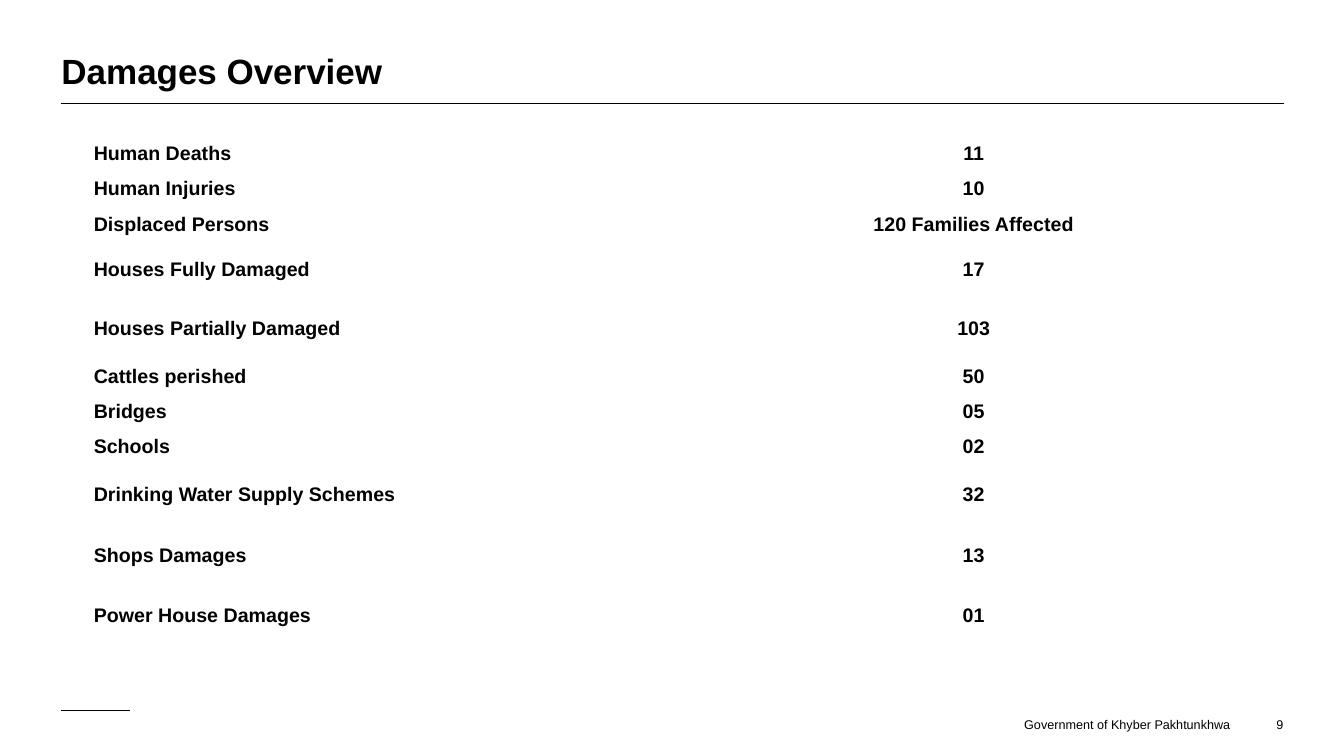
from dataclasses import dataclass

import pptx
import pptx.dml.color
import pptx.enum.shapes
import pptx.enum.text
import pptx.oxml.ns
import pptx.util
from lxml import etree

Inches = pptx.util.Inches
Align = pptx.enum.text.PP_ALIGN
Anchor = pptx.enum.text.MSO_ANCHOR

BLACK = pptx.dml.color.RGBColor(0x00, 0x00, 0x00)
FONT = "Arial"
LEFT, RIGHT = 0.61, 12.73
TALL_ROW = 0.6


@dataclass
class Damage:
    label: str
    value: str
    height: float = 0.35


@dataclass
class Rule:
    end: float
    top: float


@dataclass
class Label:
    text: str
    left: float
    top: float
    width: float
    height: float
    size: float = 9
    bold: bool = False
    align: Align = Align.LEFT
    anchor: Anchor = Anchor.BOTTOM
    wrap: bool = True


DAMAGES = [
    Damage("Human Deaths", "11"),
    Damage("Human Injuries", "10"),
    Damage("Displaced Persons", "120 Families Affected"),
    Damage("Houses Fully Damaged", "17", 0.56),
    Damage("Houses Partially Damaged", "103", TALL_ROW),
    Damage("Cattles perished", "50"),
    Damage("Bridges", "05"),
    Damage("Schools", "02"),
    Damage("Drinking Water Supply Schemes", "32", TALL_ROW),
    Damage("Shops Damages", "13", TALL_ROW),
    Damage("Power House Damages", "01", TALL_ROW),
]
RULES = [Rule(1.29, 7.05), Rule(RIGHT, 1.03)]
LABELS = [
    Label("Government of Khyber Pakhtunkhwa", 10.15, 7.11, 2.06, 0.15,
          align=Align.CENTER, anchor=Anchor.MIDDLE, wrap=False),
    Label("9", 12.37, 7.11, 0.36, 0.15, align=Align.RIGHT),
    Label("Damages Overview", LEFT, 0.11, 11.11, 0.8, size=25, bold=True),
]


def write_text(text_frame, text: str, *, size: float, bold: bool = False,
               align: Align = Align.LEFT) -> None:
    paragraph = text_frame.paragraphs[0]
    paragraph.alignment = align
    run = paragraph.add_run()
    run.text = text
    run.font.name = FONT
    run.font.size = pptx.util.Pt(size)
    run.font.bold = bold
    run.font.color.rgb = BLACK


def add_label(slide, label: Label) -> None:
    box = slide.shapes.add_textbox(Inches(label.left), Inches(label.top),
                                   Inches(label.width), Inches(label.height))
    frame = box.text_frame
    frame.word_wrap = label.wrap
    frame.vertical_anchor = label.anchor
    frame.margin_left = frame.margin_right = frame.margin_top = frame.margin_bottom = 0
    write_text(frame, label.text, size=label.size, bold=label.bold, align=label.align)


def add_rule(slide, rule: Rule) -> None:
    line = slide.shapes.add_connector(
        pptx.enum.shapes.MSO_CONNECTOR.STRAIGHT,
        Inches(LEFT), Inches(rule.top), Inches(rule.end), Inches(rule.top))
    line.line.color.rgb = BLACK
    line.line.width = pptx.util.Pt(0.5)
    etree.SubElement(line._element.spPr, pptx.oxml.ns.qn("a:effectLst"))


def add_damage_table(slide, damages: list[Damage]) -> None:
    height = sum(damage.height for damage in damages)
    table = slide.shapes.add_table(len(damages), 2, Inches(0.83), Inches(1.35),
                                   Inches(11.77), Inches(height)).table
    table.first_row = False
    table.horz_banding = False
    for row, damage in zip(table.rows, damages):
        row.height = Inches(damage.height)
        columns = ((damage.label, Align.LEFT), (damage.value, Align.CENTER))
        for cell, (text, align) in zip(row.cells, columns):
            cell.fill.background()
            cell.vertical_anchor = Anchor.MIDDLE
            write_text(cell.text_frame, text, size=14, bold=True, align=align)


def main() -> None:
    presentation = pptx.Presentation()
    presentation.slide_width = Inches(13.33)
    presentation.slide_height = Inches(7.5)
    slide = presentation.slides.add_slide(presentation.slide_layouts[6])
    for rule in RULES:
        add_rule(slide, rule)
    for label in LABELS:
        add_label(slide, label)
    add_damage_table(slide, DAMAGES)
    presentation.save("out.pptx")


if __name__ == "__main__":
    main()
